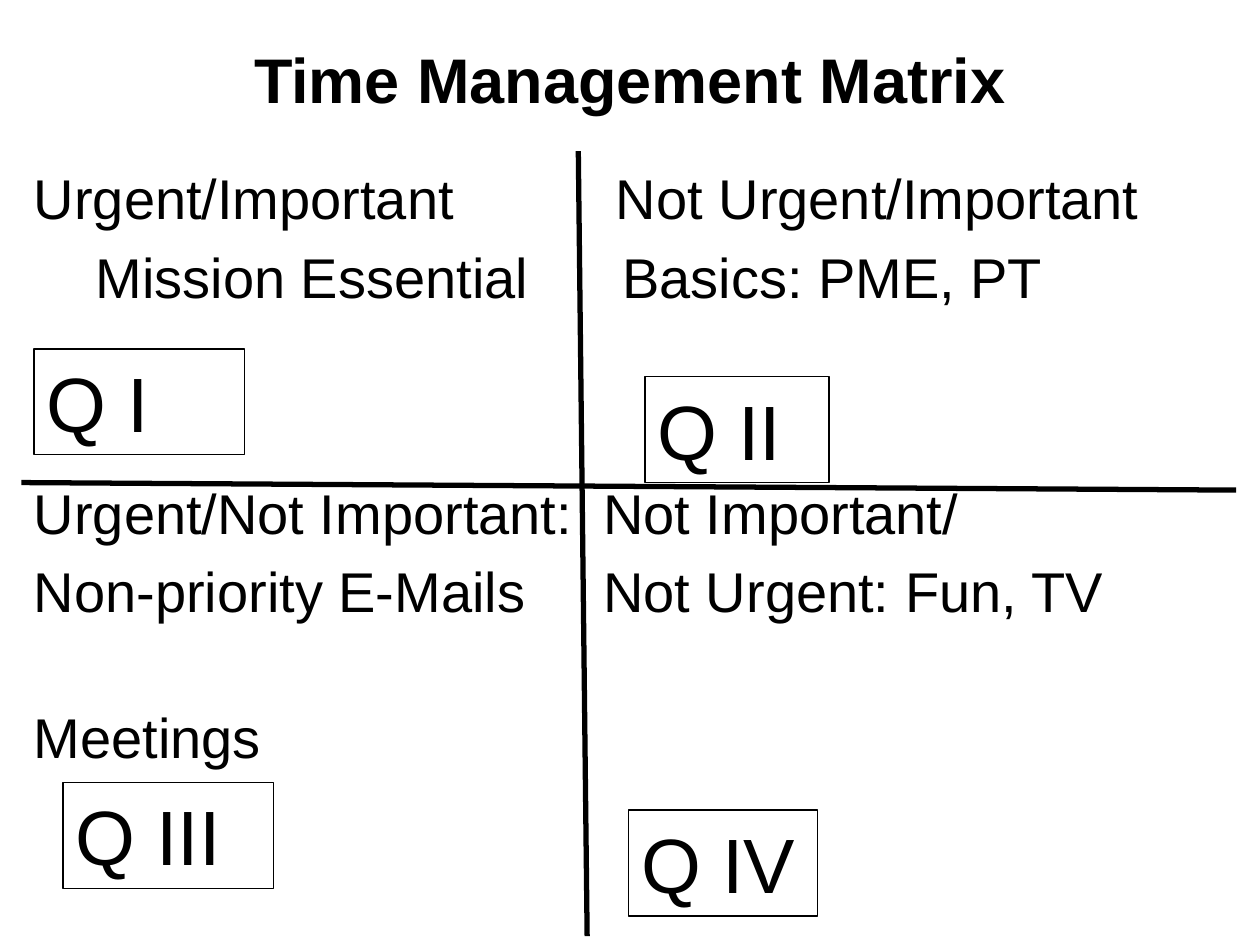
import lxml.etree
import pptx
import pptx.dml.color
import pptx.enum.shapes
import pptx.enum.text
import pptx.oxml.ns
import pptx.util
from pptx.util import Inches

BLACK = pptx.dml.color.RGBColor(0, 0, 0)
qn = pptx.oxml.ns.qn
ALIGN = pptx.enum.text.PP_ALIGN


def write(para, text, size, bold=False, align=ALIGN.LEFT, line=None, before=0, tabs=()):
    para.alignment = align
    para.space_before = pptx.util.Pt(before)
    if line:
        para.line_spacing = pptx.util.Pt(line)
    if tabs:
        tab_list = lxml.etree.SubElement(para._p.get_or_add_pPr(), qn("a:tabLst"))
        for stop in tabs:
            lxml.etree.SubElement(tab_list, qn("a:tab"), pos=str(Inches(stop)), algn="l")
    span = para.add_run()
    span.text = text
    span.font.name = "Arial"
    span.font.size = pptx.util.Pt(size)
    span.font.bold = bold
    span.font.color.rgb = BLACK


deck = pptx.Presentation()
deck.slide_width = Inches(10)
deck.slide_height = Inches(7.5)
page = deck.slides.add_slide(deck.slide_layouts[6])

title = page.shapes.add_textbox(Inches(0.5), Inches(0), Inches(9), Inches(1.25))
title.text_frame.word_wrap = True
title.text_frame.vertical_anchor = pptx.enum.text.MSO_ANCHOR.MIDDLE
write(title.text_frame.paragraphs[0], "Time Management Matrix", 36, bold=True, align=ALIGN.CENTER)

body = page.shapes.add_textbox(Inches(0.17), Inches(1.25), Inches(9.33), Inches(6.06))
body.text_frame.word_wrap = True
rows = [
    ("Urgent/Important\tNot Urgent/Important", 0, (4.62,)),
    ("\tMission Essential\tBasics: PME, PT", 6.4, (0.49, 4.67)),
    ("Urgent/Not Important:\tNot Important/", 96.2, (4.52,)),
    ("Non-priority E-Mails\tNot Urgent: Fun, TV", 6.4, (4.52,)),
    ("Meetings", 44.9, ()),
]
for index, (text, before, tabs) in enumerate(rows):
    para = body.text_frame.add_paragraph() if index else body.text_frame.paragraphs[0]
    write(para, text, 32, line=38.5, before=before, tabs=tabs)

for ends in [(4.59, 1.2, 4.66, 7.43), (0.17, 3.83, 9.81, 3.89)]:
    axis = page.shapes.add_connector(
        pptx.enum.shapes.MSO_CONNECTOR.STRAIGHT, *[Inches(value) for value in ends]
    )
    axis.line.color.rgb = BLACK
    axis.line.width = pptx.util.Pt(3)
    lxml.etree.SubElement(axis._element.spPr, qn("a:effectLst"))

quadrants = [
    ("Q I", 0.27, 2.77, 1.67),
    ("Q II", 5.12, 2.99, 1.46),
    ("Q III", 0.5, 6.21, 1.67),
    ("Q IV", 4.99, 6.43, 1.5),
]
for text, left, top, width in quadrants:
    box = page.shapes.add_shape(
        pptx.enum.shapes.MSO_SHAPE.RECTANGLE,
        Inches(left), Inches(top), Inches(width), Inches(0.84),
    )
    box.shadow.inherit = False
    box.fill.background()
    box.line.color.rgb = BLACK
    box.line.width = pptx.util.Pt(0.75)
    box.text_frame.word_wrap = True
    box.text_frame.vertical_anchor = pptx.enum.text.MSO_ANCHOR.TOP
    write(box.text_frame.paragraphs[0], text, 44, line=53)

deck.save("out.pptx")
